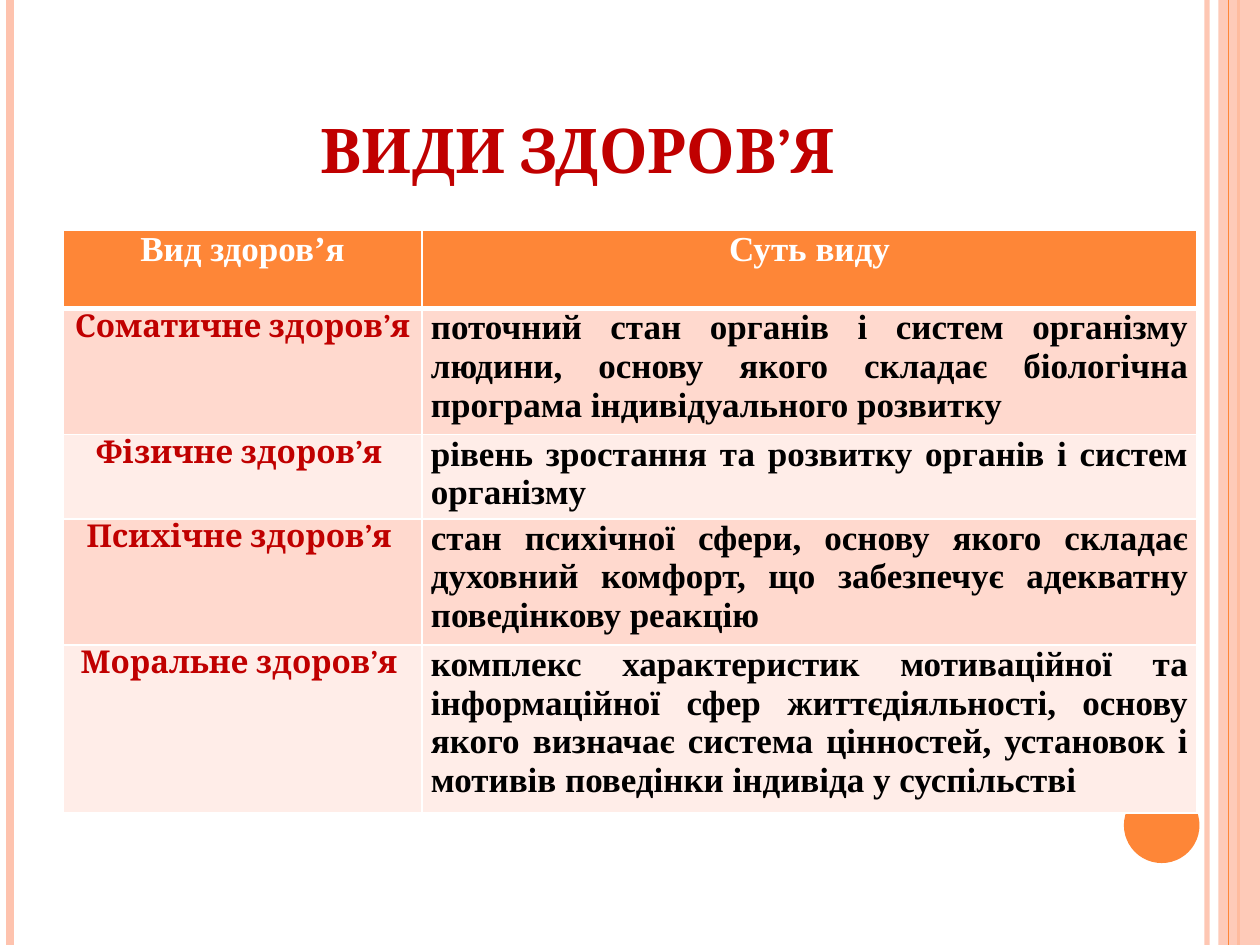
from dataclasses import dataclass
from typing import Any

from lxml import etree
from pptx import Presentation, util as u
from pptx.dml.color import RGBColor
from pptx.enum import shapes, text
from pptx.oxml.ns import qn

WIDTH, HEIGHT = 10, 7.5
COLORS = {
    "orange": "FE8637", "peach": "FEC3AE", "band": "FFD9CE",
    "pale": "FFEDE8", "red": "C00000", "white": "FFFFFF", "black": "000000",
}
HEADING, BODY = "Cambria", "Times New Roman"
CENTER, JUSTIFY = text.PP_ALIGN.CENTER, text.PP_ALIGN.JUSTIFY

HEADERS = ("Вид здоров’я", "Суть виду")
KINDS = [
    ("Соматичне здоров’я ", "поточний стан органів і систем організму людини, "
     "основу якого складає біологічна програма індивідуального розвитку"),
    ("Фізичне здоров’я ", "рівень зростання та розвитку органів і систем організму"),
    ("Психічне здоров’я ", "стан психічної сфери, основу якого складає духовний "
     "комфорт, що забезпечує адекватну поведінкову реакцію"),
    ("Моральне здоров’я ", "комплекс характеристик мотиваційної та інформаційної "
     "сфер життєдіяльності, основу якого визначає система цінностей, установок "
     "і мотивів поведінки індивіда у суспільстві"),
]


def rgb(name):
    return RGBColor.from_string(COLORS[name])


def set_alpha(fill_parent, percent):
    color = next(fill_parent.iter(qn("a:srgbClr")))
    etree.SubElement(color, qn("a:alpha"), val=str(percent * 1000))


@dataclass
class SlideBuilder:
    """Places elements on one slide; lengths are inches on a 10 x 7.5 grid."""
    slide: Any

    def rule(self, x, color, width, alpha=100):
        """Draw a vertical line over the full slide height."""
        line = self.slide.shapes.add_connector(
            shapes.MSO_CONNECTOR.STRAIGHT, u.Inches(x), 0, u.Inches(x), u.Inches(HEIGHT))
        line.line.color.rgb = rgb(color)
        line.line.width = u.Pt(width)
        properties = line._element.spPr
        if alpha < 100:
            set_alpha(properties, alpha)
        etree.SubElement(properties, qn("a:effectLst"))

    def shape(self, kind, box, color, alpha=100):
        shape = self.slide.shapes.add_shape(kind, *map(u.Inches, box))
        shape.shadow.inherit = False
        shape.fill.solid()
        shape.fill.fore_color.rgb = rgb(color)
        shape.line.fill.background()
        if alpha < 100:
            set_alpha(shape._element.spPr, alpha)

    def add_span(self, frame, words, font, size, color, align):
        para = frame.paragraphs[0]
        para.alignment = align
        span = para.add_run()
        span.text = words
        span.font.name, span.font.size, span.font.bold = font, u.Pt(size), True
        span.font.color.rgb = rgb(color)
        return span

    def title(self, words, box):
        frame = self.slide.shapes.add_textbox(*map(u.Inches, box)).text_frame
        frame.word_wrap = True
        frame.vertical_anchor = text.MSO_ANCHOR.BOTTOM
        span = self.add_span(frame, words, HEADING, 44, "red", CENTER)
        span.font._element.set("cap", "small")

    def border(self, cell, bottom):
        properties = cell._tc.get_or_add_tcPr()
        for side, width in zip("LRTB", (1, 1, 1, bottom)):
            edge = etree.SubElement(properties, qn(f"a:ln{side}"), w=str(u.Pt(width)))
            fill = etree.SubElement(edge, qn("a:solidFill"))
            etree.SubElement(fill, qn("a:srgbClr"), val=COLORS["white"])

    def cell(self, cell, words, fill, bottom, *style):
        cell.margin_left = cell.margin_right = u.Inches(0.07)
        cell.margin_top = cell.margin_bottom = 0
        self.border(cell, bottom)
        cell.fill.solid()
        cell.fill.fore_color.rgb = rgb(fill)
        self.add_span(cell.text_frame, words, *style)

    def table(self, left, top, columns, rows):
        table = self.slide.shapes.add_table(
            len(rows), len(columns), u.Inches(left), u.Inches(top),
            u.Inches(sum(columns)), u.Inches(sum(rows))).table
        for column, width in zip(table.columns, columns):
            column.width = u.Inches(width)
        for row, height in zip(table.rows, rows):
            row.height = u.Inches(height)
        for index, words in enumerate(HEADERS):
            self.cell(table.cell(0, index), words, "orange", 3, BODY, 20, "white", CENTER)
        for index, (name, essence) in enumerate(KINDS, 1):
            fill = "band" if index % 2 else "pale"
            self.cell(table.cell(index, 0), name, fill, 1, HEADING, 18, "red", CENTER)
            self.cell(table.cell(index, 1), essence, fill, 1, BODY, 20, "black", JUSTIFY)


def main():
    deck = Presentation()
    deck.slide_width, deck.slide_height = u.Inches(WIDTH), u.Inches(HEIGHT)
    page = SlideBuilder(deck.slides.add_slide(deck.slide_layouts[6]))

    page.rule(9.58, "peach", 3, alpha=93)
    page.rule(0.08, "peach", 4.5)
    page.rule(9.83, "orange", 1.5)
    page.shape(shapes.MSO_SHAPE.RECTANGLE, (9.67, 0, 0.33, HEIGHT), "peach", alpha=87)
    page.rule(9.75, "orange", 0.75)
    page.shape(shapes.MSO_SHAPE.OVAL, (8.92, 6.25, 0.6, 0.6), "orange")

    page.title("види здоров’я", (0.5, 0.3, 8.17, 1.25))
    page.table(0.5, 1.83, columns=(2.85, 6.15), rows=(0.62, 0.92, 0.62, 0.92, 1.23))
    deck.save("out.pptx")


if __name__ == "__main__":
    main()
